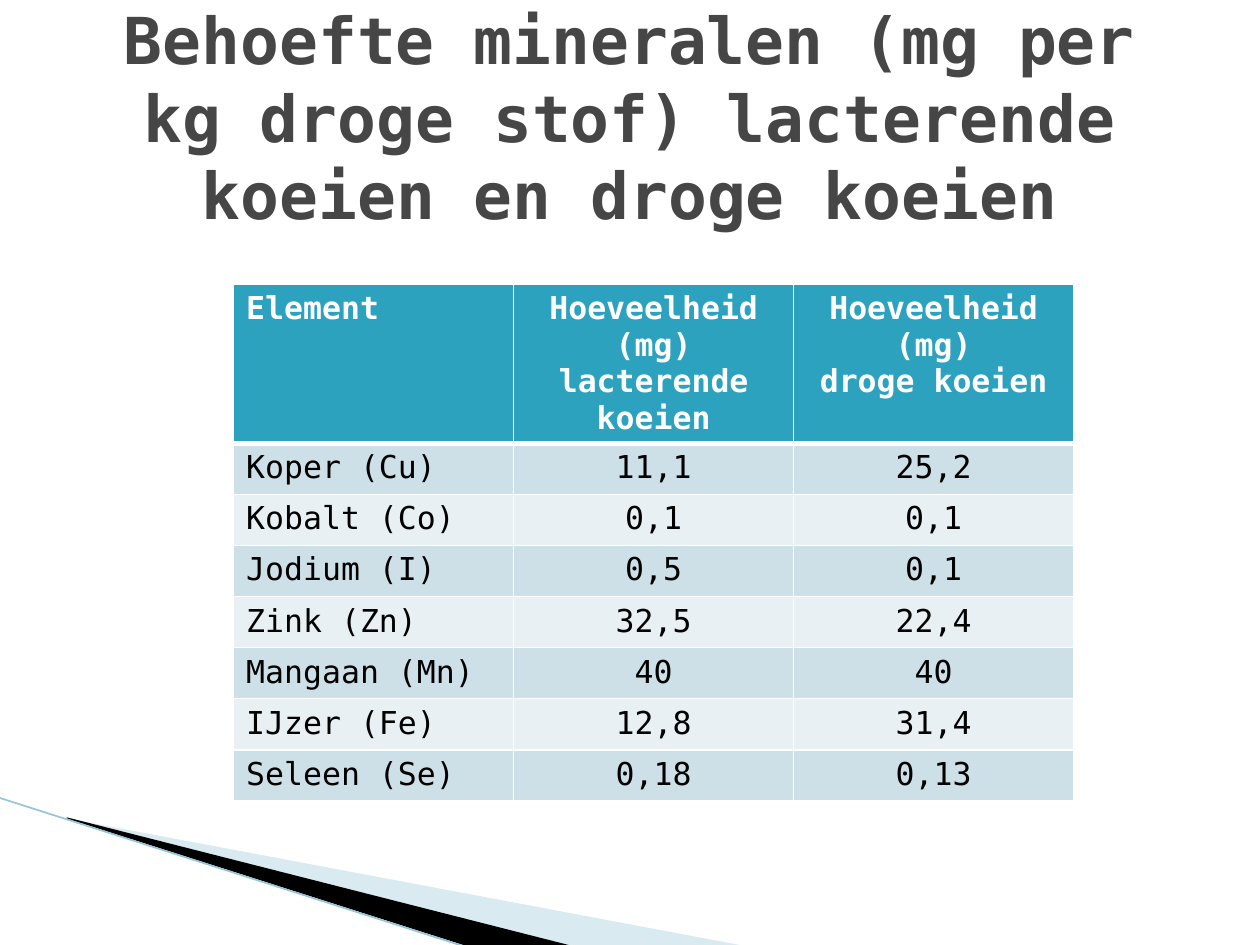
from pptx import Presentation
from pptx import util as u
from pptx.dml.color import RGBColor
from pptx.enum import shapes, text
from pptx.oxml import parse_xml
from pptx.oxml.ns import nsdecls, qn

FONT = "DejaVu Sans Mono"
WHITE, BLACK, TEAL = "FFFFFF", "000000", "2DA2BF"
BANDS = ["CDE0E8", "E8F0F4"]
TITLE = "Behoefte mineralen (mg per kg droge stof) lacterende koeien en droge koeien"
HEADER = ["Element", "Hoeveelheid (mg)\nlacterende koeien", "Hoeveelheid (mg)\ndroge koeien"]
MINERALS = [
    ["Koper (Cu)", "11,1", "25,2"],
    ["Kobalt (Co)", "0,1", "0,1"],
    ["Jodium (I)", "0,5", "0,1"],
    ["Zink (Zn)", "32,5", "22,4"],
    ["Mangaan (Mn)", "40", "40"],
    ["IJzer (Fe)", "12,8", "31,4"],
    ["Seleen (Se)", "0,18", "0,13"],
]


def paint(color_format, color):
    color_format.rgb = RGBColor.from_string(color)


def fill_solid(fill, color):
    fill.solid()
    paint(fill.fore_color, color)


def format_text(frame, size, color, bold, align):
    for para in frame.paragraphs:
        para.alignment = align
        for span in para.runs:
            span.font.name = FONT
            span.font.size = u.Pt(size)
            span.font.bold = bold
            paint(span.font.color, color)


def add_wedge(page, points, color, opacity=100):
    """Draw a filled polygon; opacity is a percentage."""
    builder = page.shapes.build_freeform(*points[0], scale=u.Pt(1))
    builder.add_line_segments(points[1:], close=True)
    wedge = builder.convert_to_shape()
    wedge.shadow.inherit = False
    wedge.line.fill.background()
    fill_solid(wedge.fill, color)
    if opacity < 100:
        tint = wedge.fill._xPr.find(qn("a:solidFill"))[0]
        tint.append(parse_xml(f'<a:alpha {nsdecls("a")} val="{opacity * 1000}"/>'))


def add_edge(page, start, end, color, width):
    points = [u.Pt(value) for value in (*start, *end)]
    edge = page.shapes.add_connector(shapes.MSO_CONNECTOR.STRAIGHT, *points)
    paint(edge.line.color, color)
    edge.line.width = u.Pt(width)
    edge._element.spPr.append(parse_xml(f'<a:effectLst {nsdecls("a")}/>'))


def set_title(page, wording):
    title = page.shapes.title
    title.left, title.top, title.width, title.height = map(u.Pt, (36, 21.6, 648, 90))
    frame = title.text_frame
    frame.text = wording
    frame.word_wrap = True
    frame.auto_size = text.MSO_AUTO_SIZE.NONE
    frame.vertical_anchor = text.MSO_ANCHOR.MIDDLE
    format_text(frame, 36.9, "464646", True, text.PP_ALIGN.CENTER)


def set_borders(cell, bottom):
    """Give the cell white borders of 1 pt, with its own width at the bottom."""
    widths = {"lnL": 1, "lnR": 1, "lnT": 1, "lnB": bottom}
    properties = cell._tc.get_or_add_tcPr()
    for position, (side, width) in enumerate(widths.items()):
        properties.insert(position, parse_xml(
            f'<a:{side} {nsdecls("a")} w="{u.Pt(width)}"><a:solidFill>'
            f'<a:srgbClr val="{WHITE}"/></a:solidFill></a:{side}>'))


def add_mineral_table(page, rows):
    header_height, row_height, column_width = 90, 29.2, 160
    height = header_height + row_height * (len(rows) - 1)
    table = page.shapes.add_table(
        len(rows), len(rows[0]), u.Pt(133.5), u.Pt(162.5),
        u.Pt(column_width * len(rows[0])), u.Pt(height)).table
    for r, values in enumerate(rows):
        is_header = r == 0
        table.rows[r].height = u.Pt(header_height if is_header else row_height)
        for c, value in enumerate(values):
            cell = table.cell(r, c)
            cell.text_frame.text = value
            align = text.PP_ALIGN.CENTER if c else text.PP_ALIGN.LEFT
            format_text(cell.text_frame, 18, WHITE if is_header else BLACK, is_header, align)
            fill_solid(cell.fill, TEAL if is_header else BANDS[(r - 1) % 2])
            set_borders(cell, bottom=3 if is_header else 1)


def main():
    deck = Presentation()
    deck.slide_width, deck.slide_height = u.Pt(720), u.Pt(540)
    page = deck.slides.add_slide(deck.slide_layouts.get_by_name("Title Only"))
    add_wedge(page, [(39.6, 468.5), (428.4, 540.7), (328.3, 540.7), (39.6, 468)], "A0CBDC", 40)
    add_wedge(page, [(38.2, 467.3), (329, 540.7), (267.8, 541.4), (38.9, 468)], BLACK)
    add_edge(page, (-0.7, 455.8), (267.1, 541.4), "97C5D8", 0.95)
    set_title(page, TITLE)
    add_mineral_table(page, [HEADER, *MINERALS])
    deck.save("out.pptx")


if __name__ == "__main__":
    main()
